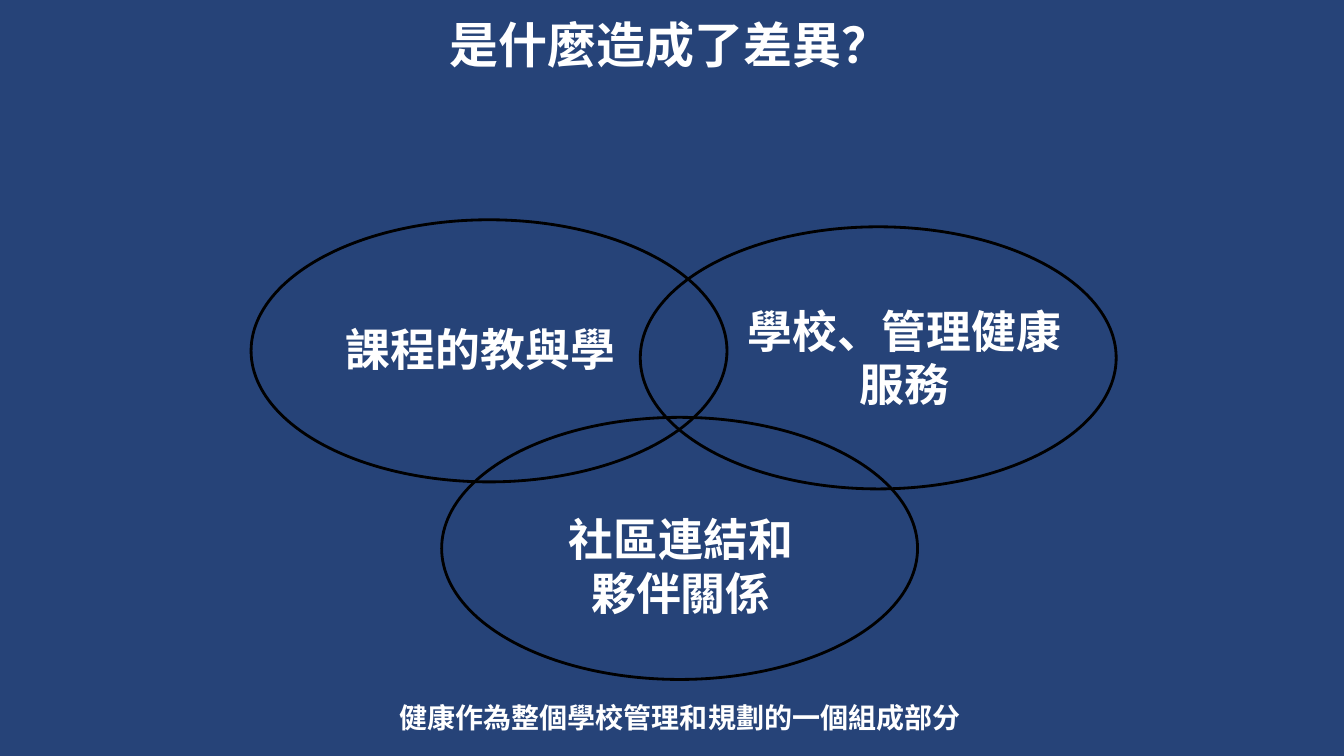
from pptx import Presentation
from pptx.dml.color import RGBColor
from pptx.enum.shapes import MSO_SHAPE
from pptx.enum.text import MSO_ANCHOR, MSO_AUTO_SIZE, PP_ALIGN
from pptx.util import Inches, Pt

ELLIPSE = MSO_SHAPE.OVAL
TOP = MSO_ANCHOR.TOP
CENTER = PP_ALIGN.CENTER
GROW, FIXED = MSO_AUTO_SIZE.SHAPE_TO_FIT_TEXT, MSO_AUTO_SIZE.NONE

NAVY = RGBColor(0x26, 0x43, 0x78)
WHITE = RGBColor(0xFF, 0xFF, 0xFF)
BLACK = RGBColor(0x00, 0x00, 0x00)

TITLE_ONLY = 5
ELLIPSE_SIZE = (35.41, 34.67)

# Ellipse corner, label area and label; lengths in percent of the slide
CIRCLES = [
    ((18.68, 29.07), (23.86, 41.87, 23.78, 8.53), "課程的教與學"),
    ((47.64, 30), (54.16, 39.47, 26.26, 15.73), "學校、管理健康服務"),
    ((32.86, 55.2), (38.78, 67.07, 23.78, 15.73), "社區連結和\n夥伴關係"),
]


class VennSlide:
    """Holds the style and the page; areas are percentages of the slide."""

    def __init__(self, deck):
        self.width, self.height = deck.slide_width, deck.slide_height
        self.page = deck.slides.add_slide(deck.slide_layouts[TITLE_ONLY])
        self.page.background.fill.solid()
        self.page.background.fill.fore_color.rgb = NAVY

    def place(self, left, top, width, height):
        return (int(left * self.width / 100), int(top * self.height / 100),
                int(width * self.width / 100), int(height * self.height / 100))

    def set_text(self, box, text, size, font="Lato", wrap=True, fit=GROW, spacing=None):
        frame = box.text_frame
        frame.text = text
        frame.word_wrap = wrap
        frame.auto_size = fit
        frame.vertical_anchor = TOP
        for para in frame.paragraphs:
            para.alignment = CENTER
            para.line_spacing = spacing
            for span in para.runs:
                span.font.name = font
                span.font.size = Pt(size)
                span.font.bold = True
                span.font.color.rgb = WHITE

    def title(self, area, text):
        box = self.page.shapes.title
        box.left, box.top, box.width, box.height = self.place(*area)
        self.set_text(box, text, 35, fit=FIXED, spacing=0.9)

    def caption(self, area, text):
        box = self.page.shapes.add_textbox(*self.place(*area))
        self.set_text(box, text, 20, font="Arial", wrap=False)

    def circle(self, corner, label_area, text):
        group = self.page.shapes.add_group_shape()
        label = group.shapes.add_textbox(*self.place(*label_area))
        self.set_text(label, text, 32)
        outline = group.shapes.add_shape(ELLIPSE, *self.place(*corner, *ELLIPSE_SIZE))
        outline.shadow.inherit = False
        outline.fill.background()
        outline.line.color.rgb = BLACK
        outline.line.width = Pt(2)


def main():
    deck = Presentation()
    deck.slide_width, deck.slide_height = Inches(13.33), Inches(7.5)
    venn = VennSlide(deck)

    # Heading
    venn.title((17.55, 2.13, 64.67, 19.33), "是什麼造成了差異？")

    # Overlapping circles
    for corner, label_area, text in CIRCLES:
        venn.circle(corner, label_area, text)

    # Closing line
    venn.caption((27.98, 92, 45.24, 5.87), "健康作為整個學校管理和規劃的一個組成部分")

    deck.save("out.pptx")


if __name__ == "__main__":
    main()
